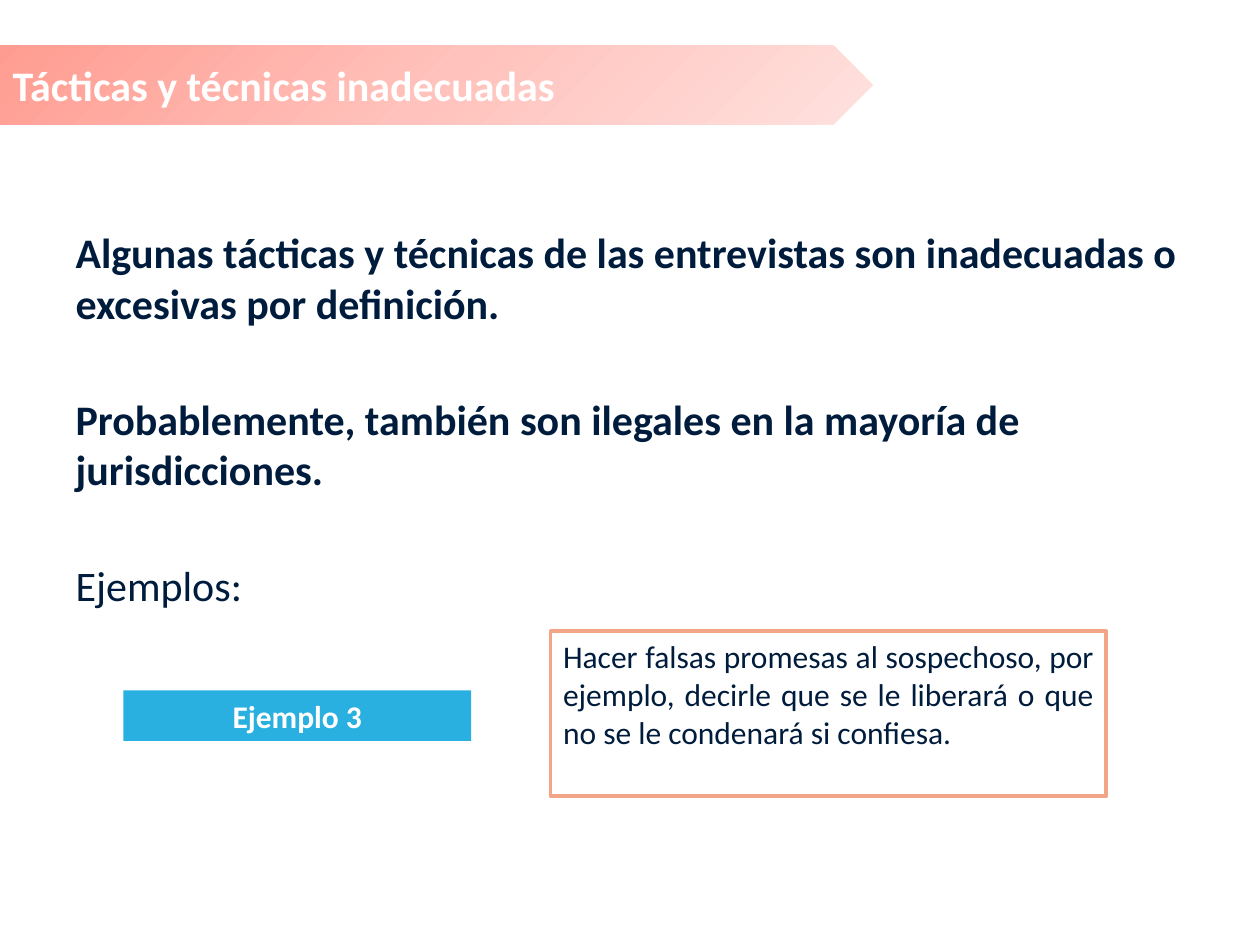
from lxml.etree import SubElement
from pptx import Presentation
from pptx.dml.color import RGBColor
from pptx.enum.shapes import MSO_SHAPE as Shape
from pptx.enum.text import MSO_ANCHOR as Anchor, MSO_AUTO_SIZE as AutoSize, PP_ALIGN as Align
from pptx.oxml.ns import qn
from pptx.util import Pt

# Content
HEADING = "Tácticas y técnicas inadecuadas"
STATEMENTS = [
    ("Algunas tácticas y técnicas de las entrevistas son inadecuadas o excesivas por definición.", True),
    ("Probablemente, también son ilegales en la mayoría de jurisdicciones.", True),
    ("Ejemplos:", False),
]
EXAMPLE_LABEL = "Ejemplo 3"
EXAMPLE = ("Hacer falsas promesas al sospechoso, por ejemplo, decirle que se le "
           "liberará o que no se le condenará si confiesa.")

# Format: boxes are left, top, width, height in points
COLORS = {"navy": "001C3D", "white": "FFFFFF", "blue": "00A2DB", "salmon": "F3A687",
          "banner_start": "FF9C91", "banner_middle": "FFC2BC", "banner_end": "FFE1DE"}
BANNER_STOPS = [(0, "banner_start"), (50, "banner_middle"), (100, "banner_end")]
BANNER_BOX = (0, 25.92, 498.96, 45.36)
BODY_BOX = (36, 126, 648, 246.24)
LABEL_BOX = (70.56, 394.56, 198.72, 28.8)
EXAMPLE_BOX = (314.64, 360.72, 317.52, 94.32)
STATEMENT_GAP = 37.6


def place(part, box):
    part.left, part.top, part.width, part.height = map(Pt, box)


def write(part, paragraphs, size=24, color="navy", align=Align.LEFT, anchor=Anchor.TOP, gap=0):
    """Fill a part with (text, bold) paragraphs."""
    frame = part.text_frame
    frame.word_wrap = True
    frame.auto_size = AutoSize.NONE
    frame.vertical_anchor = anchor
    for index, (text, bold) in enumerate(paragraphs):
        paragraph = frame.add_paragraph() if index else frame.paragraphs[0]
        paragraph.alignment = align
        paragraph.space_before = Pt(gap if index else 0)
        run = paragraph.add_run()
        run.text = text
        run.font.name = "Calibri"
        run.font.size = Pt(size)
        run.font.bold = bold
        run.font.color.rgb = RGBColor.from_string(COLORS[color])


def add_box(slide, preset, box, fill=None, line=None):
    part = slide.shapes.add_shape(preset, *map(Pt, box))
    part.shadow.inherit = False
    if fill:
        part.fill.solid()
        part.fill.fore_color.rgb = RGBColor.from_string(COLORS[fill])
    if line:
        part.line.color.rgb = RGBColor.from_string(COLORS[line])
        part.line.width = Pt(2)
    else:
        part.line.fill.background()
    return part


def radiate_from_corner(part, stops):
    """Circular gradient that spreads from the top left corner."""
    part.fill.gradient()
    gradient = part.element.spPr.find(qn("a:gradFill"))
    for child in list(gradient):
        gradient.remove(child)
    stop_list = SubElement(gradient, qn("a:gsLst"))
    for percent, color in stops:
        stop = SubElement(stop_list, qn("a:gs"), pos=str(percent * 1000))
        SubElement(stop, qn("a:srgbClr"), val=COLORS[color])
    circle = SubElement(gradient, qn("a:path"), {"path": "circle"})
    SubElement(circle, qn("a:fillToRect"), r="100000", b="100000")


def main():
    deck = Presentation()
    deck.slide_width, deck.slide_height = Pt(720), Pt(540)
    slide = deck.slides.add_slide(deck.slide_layouts[1])
    heading, body = slide.placeholders

    # Statements
    place(body, BODY_BOX)
    write(body, STATEMENTS, gap=STATEMENT_GAP)
    for paragraph in body.text_frame.paragraphs:
        properties = paragraph._p.get_or_add_pPr()
        properties.set("marL", "0")
        properties.set("indent", "0")
        SubElement(properties, qn("a:buNone"))

    # Banner, with the heading placed over it
    banner = add_box(slide, Shape.PENTAGON, BANNER_BOX)
    radiate_from_corner(banner, BANNER_STOPS)
    place(heading, BANNER_BOX)
    write(heading, [(HEADING, True)], color="white", anchor=Anchor.MIDDLE)
    banner.element.addnext(heading.element)

    # Example label, slightly transparent
    label = add_box(slide, Shape.RECTANGLE, LABEL_BOX, fill="blue")
    label_color = label.element.spPr.find(qn("a:solidFill")).find(qn("a:srgbClr"))
    SubElement(label_color, qn("a:alpha"), val="84000")
    write(label, [(EXAMPLE_LABEL, True)], size=18, color="white",
          align=Align.CENTER, anchor=Anchor.MIDDLE)

    # Example text
    example = add_box(slide, Shape.RECTANGLE, EXAMPLE_BOX, fill="white", line="salmon")
    write(example, [(EXAMPLE, False)], size=18, align=Align.JUSTIFY)

    deck.save("out.pptx")


if __name__ == "__main__":
    main()
